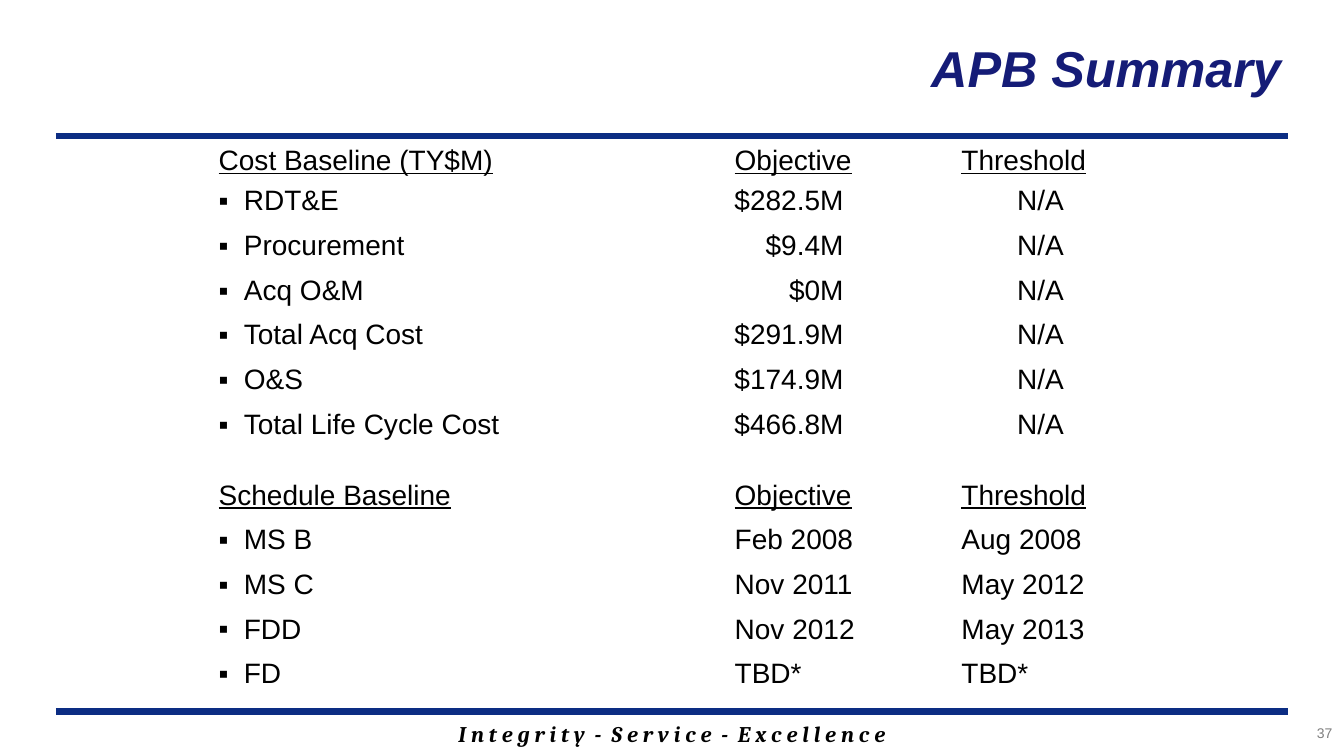
from lxml.etree import SubElement
from pptx import Presentation
from pptx.dml.color import RGBColor
from pptx.enum.shapes import MSO_CONNECTOR as Connector
from pptx.enum.text import MSO_ANCHOR as Anchor, PP_ALIGN as Align
from pptx.oxml.ns import qn
from pptx.util import Pt

COLORS = {"title": "151C77", "rule": "0C2D83", "text": "000000", "number": "7F7F7F"}

COST = [
    ("Cost Baseline (TY$M)", "Objective", "Threshold"),
    ("RDT&E", "$282.5M", "N/A"),
    ("Procurement", "$9.4M", "N/A"),
    ("Acq O&M", "$0M", "N/A"),
    ("Total Acq Cost", "$291.9M", "N/A"),
    ("O&S", "$174.9M", "N/A"),
    ("Total Life Cycle Cost", "$466.8M", "N/A"),
]
SCHEDULE = [
    ("Schedule Baseline", "Objective", "Threshold"),
    ("MS B", "Feb 2008", "Aug 2008"),
    ("MS C", "Nov 2011", "May 2012"),
    ("FDD", "Nov 2012", "May 2013"),
    ("FD", "TBD*", "TBD*"),
]
COLUMN_WIDTHS = (368.6, 124.6, 37.4, 127.4)
TEXT_COLUMNS = (0, 1, 3)
HEADER_HEIGHT, ROW_HEIGHT, SPACER_HEIGHT = 28.9, 31.9, 18.8
BULLET_INDENT = 18
MONEY_MARGIN = 39.6


def style(para, size, color, name="Arial", align=Align.LEFT, strong=False):
    """Set a paragraph's font; strong means bold and italic."""
    para.alignment = align
    font = para.font
    font.name, font.size = name, Pt(size)
    font.bold = font.italic = strong
    font.color.rgb = RGBColor.from_string(COLORS[color])


def add_text(page, box, text, anchor=Anchor.TOP, **look):
    frame = page.shapes.add_textbox(*map(Pt, box)).text_frame
    frame.word_wrap = True
    frame.vertical_anchor = anchor
    para = frame.paragraphs[0]
    para.text = text
    style(para, **look)


def add_rule(page, left, right, y):
    rule = page.shapes.add_connector(Connector.STRAIGHT, Pt(left), Pt(y), Pt(right), Pt(y))
    rule.line.color.rgb = RGBColor.from_string(COLORS["rule"])
    rule.line.width = Pt(4.5)
    SubElement(rule._element.spPr, qn("a:effectLst"))


def add_bullet(para):
    props = para._p.get_or_add_pPr()
    props.set("marL", str(Pt(BULLET_INDENT)))
    props.set("indent", str(-Pt(BULLET_INDENT)))
    SubElement(props, qn("a:buFont"), typeface="Arial")
    SubElement(props, qn("a:buChar"), char="▪")


def fill_cell(cell, text, column, header):
    para = cell.text_frame.paragraphs[0]
    para.text = text
    if column == 0 and not header:
        add_bullet(para)
    align = Align.LEFT
    if text.startswith("$"):
        align = Align.RIGHT
        cell.margin_left, cell.margin_right = 0, Pt(MONEY_MARGIN)
    elif text == "N/A":
        align = Align.CENTER
    style(para, 20, "text", align=align)
    para.font.underline = header


def add_baselines(page, left, top):
    """Place both baselines in one table, with a low empty row between them."""
    rows = COST + [None] + SCHEDULE
    heights = [ROW_HEIGHT] * len(rows)
    heights[0], heights[len(COST)] = HEADER_HEIGHT, SPACER_HEIGHT
    box = (left, top, sum(COLUMN_WIDTHS), sum(heights))
    table = page.shapes.add_table(len(rows), len(COLUMN_WIDTHS), *map(Pt, box)).table
    table.first_row = table.horz_banding = False
    for column, width in zip(table.columns, COLUMN_WIDTHS):
        column.width = Pt(width)
    for row, height, values in zip(table.rows, heights, rows):
        row.height = Pt(height)
        for cell in row.cells:
            cell.fill.background()
            cell.margin_bottom = 0
            if not values:
                SubElement(cell.text_frame.paragraphs[0]._p, qn("a:endParaRPr"), sz="800")
        if values:
            header = values in (COST[0], SCHEDULE[0])
            for column, text in zip(TEXT_COLUMNS, values):
                fill_cell(row.cells[column], text, column, header)


def add_header(page, left, top, width):
    add_text(page, (left + width - 478.8, top, 481, 68.4), "APB Summary", Anchor.MIDDLE,
             size=36, color="title", align=Align.RIGHT, strong=True)
    add_rule(page, left, left + width, top + 83.5)


def add_footer(page, left, top, width):
    add_rule(page, left, left + width, top)
    add_text(page, (left + 95.8, top + 2.9, 688.3, 26.6),
             "I n t e g r i t y  -  S e r v i c e  -  E x c e l l e n c e",
             size=16, color="text", name="Cambria", align=Align.CENTER, strong=True)
    add_text(page, (left + width - 81.3, top + 5.8, 120.2, 23.8), "37",
             size=10, color="number", align=Align.RIGHT)


def main():
    deck = Presentation()
    deck.slide_width, deck.slide_height = Pt(960), Pt(540)
    page = deck.slides.add_slide(deck.slide_layouts[6])
    add_header(page, 40, 13.7, 880)
    add_baselines(page, 149, 100.1)
    add_footer(page, 40, 508.3, 880)
    deck.save("out.pptx")


if __name__ == "__main__":
    main()
